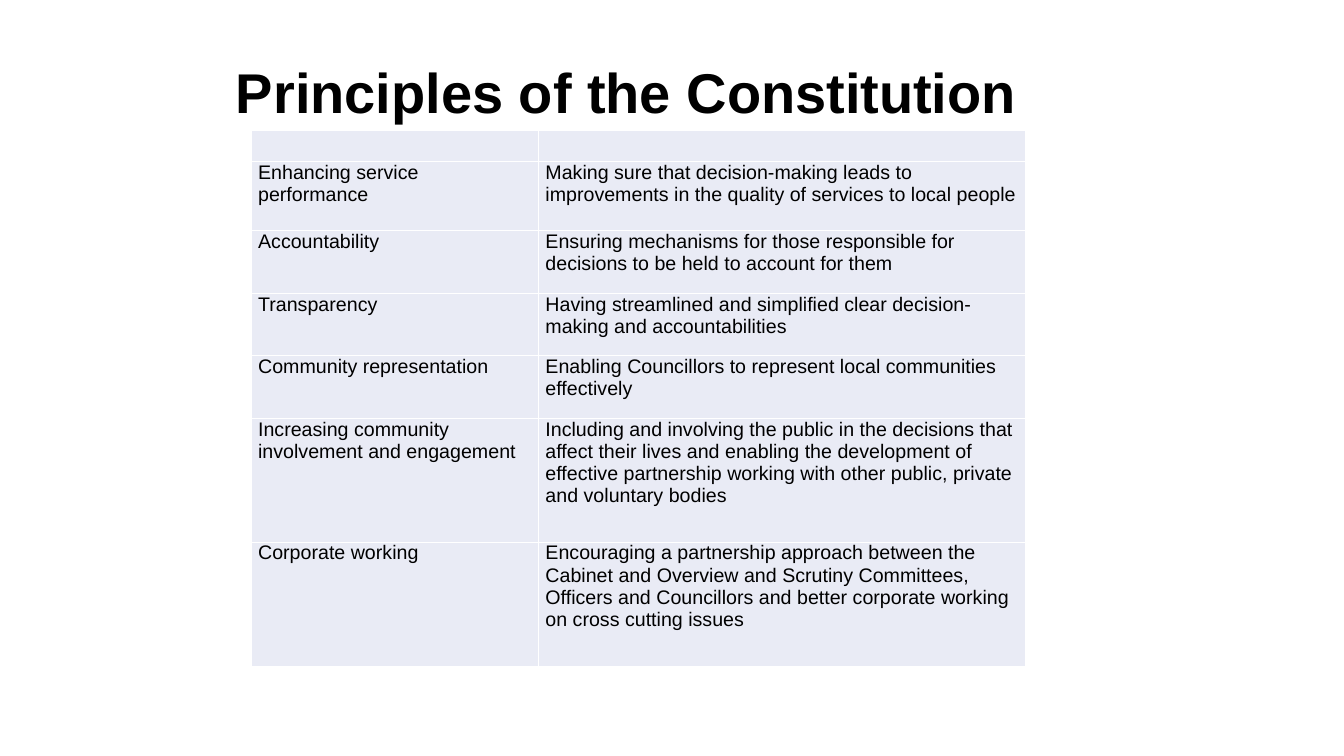
from lxml.etree import SubElement
from pptx import Presentation
from pptx.dml.color import RGBColor
from pptx.enum.text import MSO_ANCHOR, PP_ALIGN
from pptx.oxml.ns import qn
from pptx.util import Inches, Pt

COLORS = {"text": "000000", "cell": "E9EBF5", "border": "FFFFFF"}
FONT = "Arial"
BODY_SIZE = 14
COLUMN_WIDTHS = [2.85, 4.83]
HEADER_HEIGHT = 0.31

# Row height, principle, meaning
PRINCIPLES = [
    (0.69, "Enhancing service performance",
     "Making sure that decision-making leads to improvements in the quality "
     "of services to local people"),
    (0.62, "Accountability",
     "Ensuring mechanisms for those responsible for decisions to be held to "
     "account for them"),
    (0.62, "Transparency",
     "Having streamlined and simplified clear decision-making and "
     "accountabilities"),
    (0.62, "Community representation",
     "Enabling Councillors to represent local communities effectively"),
    (1.23, "Increasing community involvement and engagement",
     "Including and involving the public in the decisions that affect their "
     "lives and enabling the development of effective partnership working "
     "with other public, private and voluntary bodies"),
    (1.23, "Corporate working",
     "Encouraging a partnership approach between the Cabinet and Overview and "
     "Scrutiny Committees, Officers and Councillors and better corporate "
     "working on cross cutting issues"),
]


def add_span(para, text, size, bold=False):
    span = para.add_run()
    span.text = text
    span.font.name = FONT
    span.font.size = Pt(size)
    span.font.bold = bold
    span.font.color.rgb = RGBColor.from_string(COLORS["text"])


def set_title(page, text):
    title = page.shapes.title
    title.left, title.top = Inches(1.14), Inches(0.52)
    title.width, title.height = Inches(10.14), Inches(0.77)
    frame = title.text_frame
    frame.word_wrap = True
    frame.vertical_anchor = MSO_ANCHOR.MIDDLE
    para = frame.paragraphs[0]
    para.alignment = PP_ALIGN.CENTER
    add_span(para, text, 40, bold=True)


def set_borders(cell):
    properties = cell._tc.get_or_add_tcPr()
    for side in ("lnL", "lnR", "lnT", "lnB"):
        line = SubElement(properties, qn(f"a:{side}"), w=str(Pt(1)))
        fill = SubElement(line, qn("a:solidFill"))
        SubElement(fill, qn("a:srgbClr"), val=COLORS["border"])


def fill_cell(cell, text):
    set_borders(cell)
    cell.fill.solid()
    cell.fill.fore_color.rgb = RGBColor.from_string(COLORS["cell"])
    cell.margin_left = cell.margin_right = Inches(0.07)
    cell.margin_top = cell.margin_bottom = 0
    para = cell.text_frame.paragraphs[0]
    if text:
        para.space_after = Pt(10)
        add_span(para, text, BODY_SIZE)
    else:
        # Keeps the empty header row at its low height
        SubElement(para._p, qn("a:endParaRPr"), sz=str(BODY_SIZE * 100))


def add_principles_table(page, left, top):
    rows = [(HEADER_HEIGHT, "", "")] + PRINCIPLES
    height = sum(row[0] for row in rows)
    table = page.shapes.add_table(
        len(rows), len(COLUMN_WIDTHS), Inches(left), Inches(top),
        Inches(sum(COLUMN_WIDTHS)), Inches(height)).table
    table.first_row = False
    table.horz_banding = False
    for column, width in zip(table.columns, COLUMN_WIDTHS):
        column.width = Inches(width)
    for table_row, (row_height, *texts) in zip(table.rows, rows):
        table_row.height = Inches(row_height)
        for cell, text in zip(table_row.cells, texts):
            fill_cell(cell, text)


def main():
    deck = Presentation()
    deck.slide_width, deck.slide_height = Inches(13.33), Inches(7.5)
    page = deck.slides.add_slide(deck.slide_layouts[5])
    set_title(page, "Principles of the Constitution")
    add_principles_table(page, 2.49, 1.29)
    deck.save("out.pptx")


if __name__ == "__main__":
    main()
